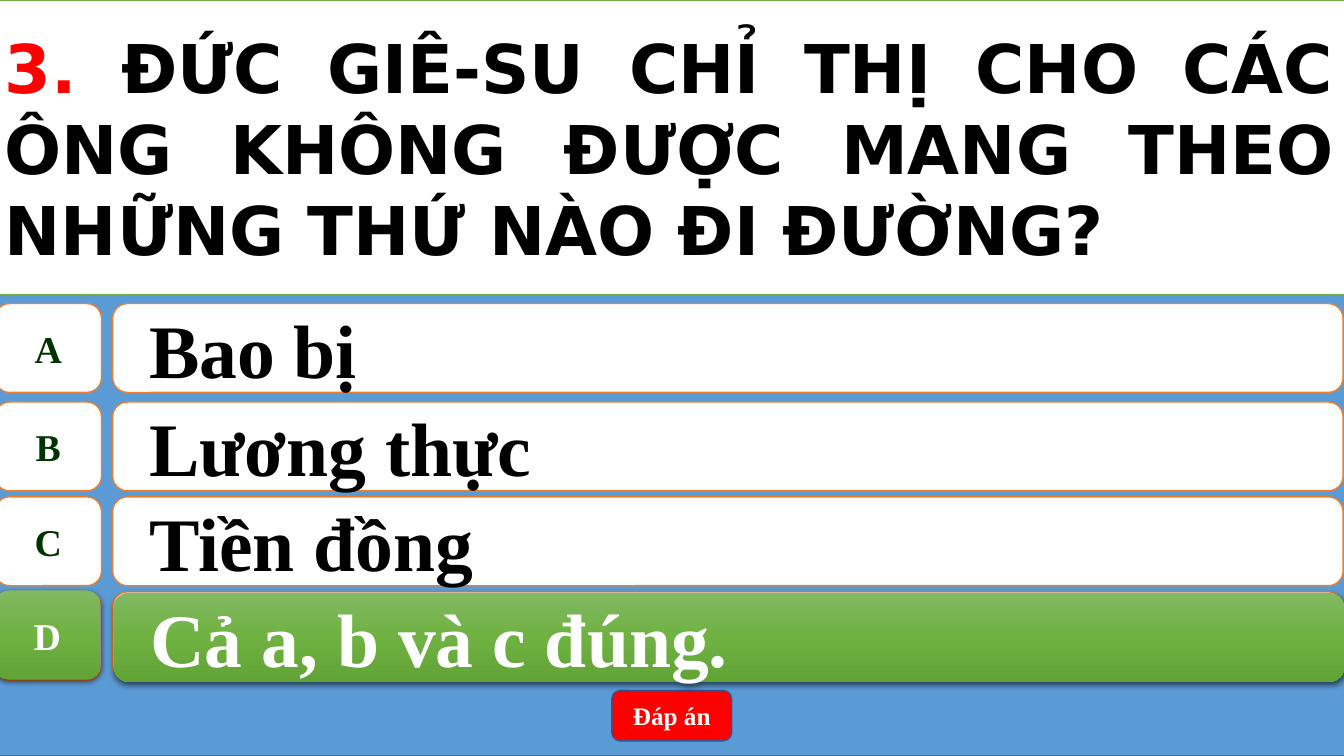
from copy import deepcopy

from lxml.etree import SubElement
from pptx import Presentation
from pptx.dml.color import RGBColor
from pptx.enum.shapes import MSO_SHAPE
from pptx.enum.text import MSO_ANCHOR, PP_ALIGN
from pptx.oxml.ns import qn
from pptx.util import Cm, Pt

WHITE = RGBColor(0xFF, 0xFF, 0xFF)
BLACK = RGBColor(0x00, 0x00, 0x00)
RED = RGBColor(0xFF, 0x00, 0x00)
BLUE = RGBColor(0x5B, 0x9B, 0xD5)
BLUE_EDGE = RGBColor(0x43, 0x73, 0x9E)
BUTTON_EDGE = RGBColor(0x32, 0x54, 0x91)
ORANGE = RGBColor(0xED, 0x7D, 0x31)
GREEN_EDGE = RGBColor(0x70, 0xAD, 0x47)
DARK_GREEN = RGBColor(0x00, 0x33, 0x00)
GREENS = (
    RGBColor(0x81, 0xB8, 0x61),
    RGBColor(0x6F, 0xB2, 0x42),
    RGBColor(0x62, 0xA3, 0x36),
)

SERIF = "Times New Roman"
LETTER = {"name": SERIF, "size": Pt(27), "bold": True}
ANSWER = {"name": SERIF, "size": Pt(54), "bold": True}
BUTTON = {"name": SERIF, "size": Pt(18), "bold": True}
QUESTION = {"name": "DejaVu Sans", "size": Pt(48), "bold": True}

ANSWERS = [("A", "Bao bị"), ("B", "Lương thực"), ("C", "Tiền đồng"),
           ("D", "Cả a, b và c đúng.")]
ROW_TOPS = [7.65, 10.13, 12.52, 14.91]
LEFT, WIDTH, ROW_HEIGHT = -0.13, 34.01, 2.24


def add_box(shapes, kind, box, fill=None, edge=None):
    sp = shapes.add_shape(kind, *[Cm(v) for v in box])
    sp.shadow.inherit = False
    if fill is not None:
        sp.fill.solid()
        sp.fill.fore_color.rgb = fill
    if edge is None:
        sp.line.fill.background()
    else:
        sp.line.color.rgb = edge
        sp.line.width = Pt(1)
    return sp


def write(sp, runs, style, align, wrap=True):
    tf = sp.text_frame
    tf.word_wrap = wrap
    tf.vertical_anchor = MSO_ANCHOR.MIDDLE
    p = tf.paragraphs[0]
    p.alignment = align
    for text, color in runs:
        r = p.add_run()
        r.text = text
        for name, value in style.items():
            setattr(r.font, name, value)
        r.font.color.rgb = color
    return p


def highlight(sp):
    sp.fill.gradient()
    sp.fill.gradient_angle = 270
    stops = sp._element.spPr.find(".//" + qn("a:gsLst"))
    stops.append(deepcopy(stops[0]))
    for i, (stop, color) in enumerate(zip(sp.fill.gradient_stops, GREENS)):
        stop.position = i / 2
        stop.color.rgb = color
    effects = sp._element.spPr.find(qn("a:effectLst"))
    shadow = SubElement(effects, qn("a:outerShdw"), blurRad="57150",
                        dist="19050", dir="5400000", algn="ctr", rotWithShape="0")
    color = SubElement(shadow, qn("a:srgbClr"), val="000000")
    SubElement(color, qn("a:alpha"), val="63000")


def add_answer(s, letter_at, bar_at, letter, answer, correct=False):
    shapes = s.shapes.add_group_shape().shapes
    fill, edge = (None, None) if correct else (WHITE, ORANGE)
    tag = add_box(shapes, MSO_SHAPE.FLOWCHART_ALTERNATE_PROCESS,
                  (*letter_at, 2.69, ROW_HEIGHT), fill, edge)
    bar = add_box(shapes, MSO_SHAPE.ROUNDED_RECTANGLE,
                  (*bar_at, 31.01, ROW_HEIGHT), fill, edge)
    if correct:
        highlight(tag)
        highlight(bar)
    write(tag, [(letter, WHITE if correct else DARK_GREEN)], LETTER,
          PP_ALIGN.CENTER, wrap=False)
    p = write(bar, [(answer, WHITE if correct else BLACK)], ANSWER, PP_ALIGN.LEFT)
    p.level = 1
    pPr = p._p.get_or_add_pPr()
    pPr.set("marL", str(Cm(1.27)))
    pPr.set("indent", str(Cm(-0.71)))


def add_button(s, box):
    sp = add_box(s.shapes, MSO_SHAPE.ROUNDED_RECTANGLE, box, RED, BUTTON_EDGE)
    write(sp, [("Đáp án", WHITE)], BUTTON, PP_ALIGN.CENTER)


def add_question(s, box):
    sp = add_box(s.shapes, MSO_SHAPE.RECTANGLE, box, WHITE, GREEN_EDGE)
    runs = [("3. ", RED),
            ("ĐỨC GIÊ-SU CHỈ THỊ CHO CÁC ÔNG KHÔNG ĐƯỢC MANG THEO "
             "NHỮNG THỨ NÀO ĐI ĐƯỜNG?", BLACK)]
    write(sp, runs, QUESTION, PP_ALIGN.JUSTIFY)


def main():
    prs = Presentation()
    prs.slide_width, prs.slide_height = Cm(33.87), Cm(19.05)
    s = prs.slides.add_slide(prs.slide_layouts[6])
    add_box(s.shapes, MSO_SHAPE.RECTANGLE, (LEFT, 0, WIDTH, 19.05), BLUE, BLUE_EDGE)
    for top, (letter, answer) in zip(ROW_TOPS, ANSWERS):
        add_answer(s, (LEFT, top), (2.84, top), letter, answer)
    add_button(s, (15.42, 17.4, 3.02, 1.27))
    add_answer(s, (-0.15, 14.88), (2.87, 14.94), *ANSWERS[-1], correct=True)
    add_question(s, (LEFT, 0, WIDTH, 7.44))
    prs.save("out.pptx")


if __name__ == "__main__":
    main()
